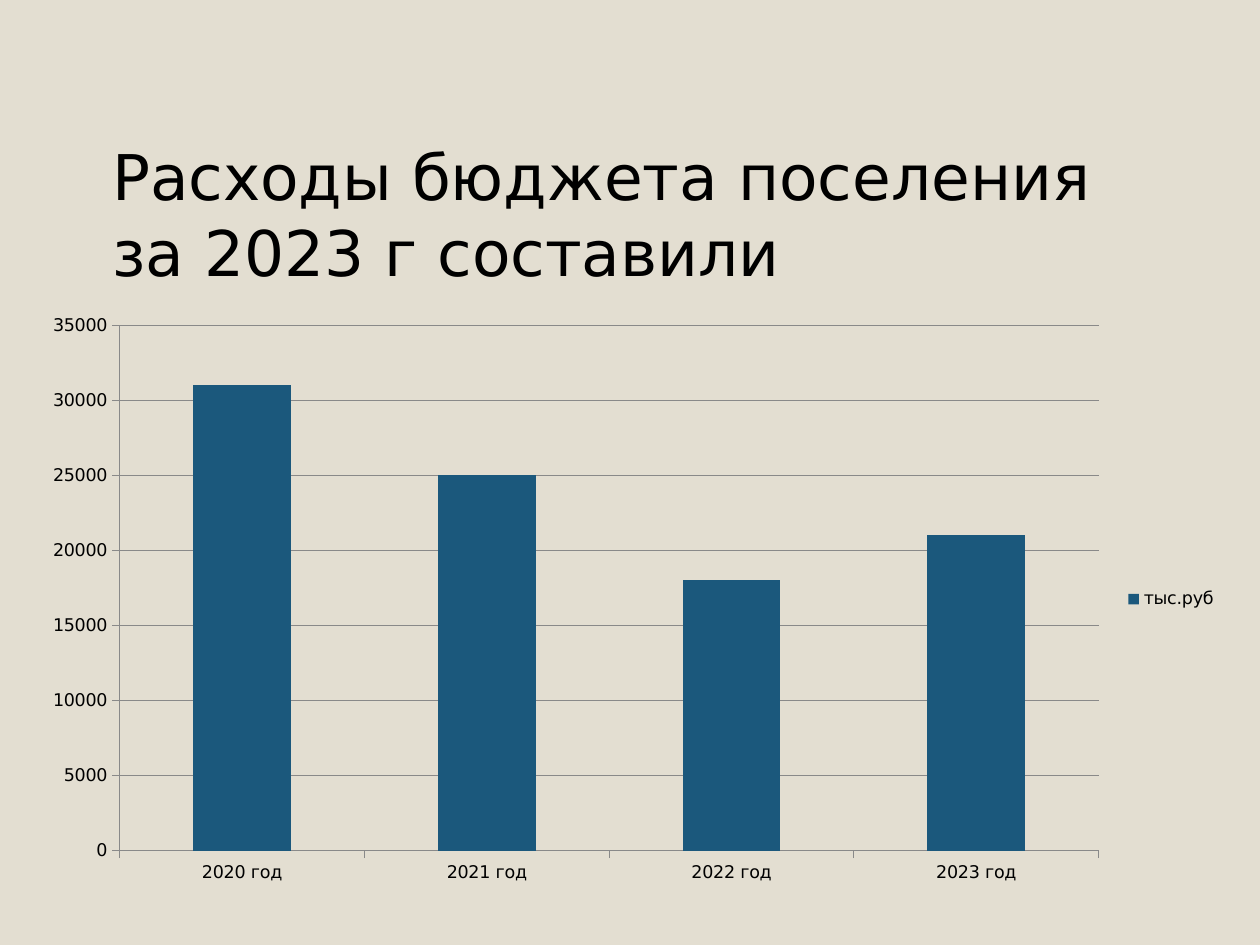
from pptx import Presentation
from pptx.chart.data import CategoryChartData
from pptx.dml.color import RGBColor
from pptx.enum.chart import XL_CHART_TYPE as ChartType
from pptx.enum.chart import XL_LEGEND_POSITION as LegendPos
from pptx.enum.chart import XL_TICK_MARK as Tick
from pptx.enum.text import MSO_ANCHOR as Anchor
from pptx.enum.text import MSO_AUTO_SIZE as AutoSize
from pptx.enum.text import PP_ALIGN as Align
from pptx.util import Inches, Pt

FONT = "DejaVu Sans"
BACKGROUND, INK, BAR, GRID = "E3DED1", "000000", "1B587C", "898989"
EXPENSES = {"2020 год": 31000, "2021 год": 25000, "2022 год": 18000, "2023 год": 21000}


def rgb(value):
    """Turn a hex string into a colour."""
    return RGBColor.from_string(value)


def style_font(font, size):
    """Apply the slide's typeface and ink at the given point size."""
    font.name, font.size, font.bold = FONT, Pt(size), False
    font.color.rgb = rgb(INK)


def place_title(s, text, left, top, width, height):
    """Fill the title placeholder and fit it to its box."""
    sp = s.shapes.title
    sp.left, sp.top, sp.width, sp.height = map(Inches, (left, top, width, height))
    tf = sp.text_frame
    tf.text = text
    tf.word_wrap, tf.auto_size = True, AutoSize.NONE
    tf.vertical_anchor = Anchor.MIDDLE
    tf.margin_left = tf.margin_right = Inches(0.1)
    tf.margin_top, tf.margin_bottom = Inches(0.05), Inches(0)
    p = tf.paragraphs[0]
    p.alignment = Align.LEFT
    style_font(p.font, 36)


def add_expense_chart(s, left, top, width, height):
    """Draw the yearly expenses as columns in the given box."""
    data = CategoryChartData()
    data.categories = list(EXPENSES)
    data.add_series("тыс.руб", list(EXPENSES.values()))
    box = map(Inches, (left, top, width, height))
    chart = s.shapes.add_chart(ChartType.COLUMN_STACKED, *box, data).chart
    style_font(chart.font, 10)
    chart.has_title = False
    chart.has_legend = True
    chart.legend.position = LegendPos.RIGHT
    chart.legend.include_in_layout = False

    plot = chart.plots[0]
    plot.gap_width, plot.overlap, plot.vary_by_categories = 150, 100, False
    fill = plot.series[0].format.fill
    fill.solid()
    fill.fore_color.rgb = rgb(BAR)

    value_axis = chart.value_axis
    value_axis.minimum_scale, value_axis.maximum_scale = 0, 35000
    value_axis.major_unit = 5000
    value_axis.has_major_gridlines = True
    for axis in (chart.category_axis, value_axis):
        axis.major_tick_mark = Tick.OUTSIDE
    for part in (chart.category_axis, value_axis, value_axis.major_gridlines):
        part.format.line.color.rgb = rgb(GRID)
        part.format.line.width = Pt(0.75)


def main():
    """Build the budget expenses slide."""
    prs = Presentation()
    prs.slide_width, prs.slide_height = Inches(10), Inches(7.5)
    s = prs.slides.add_slide(prs.slide_layouts[5])
    s.background.fill.solid()
    s.background.fill.fore_color.rgb = rgb(BACKGROUND)
    place_title(s, "Расходы бюджета поселения за 2023 г составили", 0.79, 1.09, 8.5, 1.16)
    add_expense_chart(s, 0.23, 2.41, 9.53, 4.69)
    prs.save("out.pptx")


if __name__ == "__main__":
    main()
